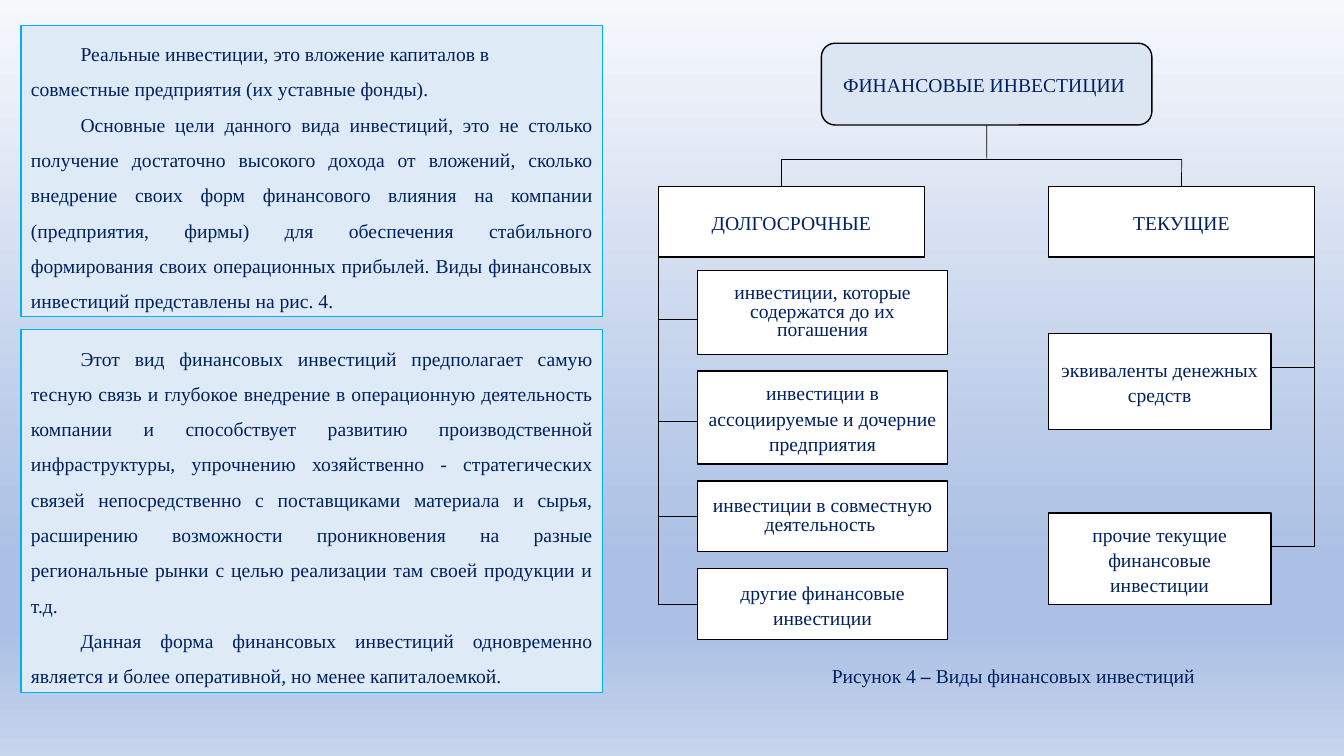
from dataclasses import dataclass

from lxml import etree
from pptx import Presentation
from pptx import util as u
from pptx.dml import color
from pptx.enum import shapes, text
from pptx.oxml import ns

NAVY, BLACK, WHITE = "002060", "000000", "FFFFFF"
PANEL_FILL, PANEL_LINE, ROOT_FILL = "DEEBF7", "00B0F0", "DCE6F2"
BACKGROUND_STOPS = ((0, "F6F8FC"), (74, "ABC0E4"), (83, "ABC0E4"), (100, "C7D5ED"))

LEFT, JUSTIFY, CENTER = text.PP_ALIGN.LEFT, text.PP_ALIGN.JUSTIFY, text.PP_ALIGN.CENTER
FONT_FORMAT = {"name": "Times New Roman", "size": u.Pt(14)}
PANEL_FRAME = {
    "word_wrap": True,
    "vertical_anchor": text.MSO_ANCHOR.TOP,
    "auto_size": text.MSO_AUTO_SIZE.SHAPE_TO_FIT_TEXT,
}
BOX_FRAME = {"word_wrap": True, "vertical_anchor": text.MSO_ANCHOR.MIDDLE}
TOP, SIDE_LEFT, BOTTOM, SIDE_RIGHT = range(4)


@dataclass
class Panel:
    top: float
    height: float
    paragraphs: tuple


@dataclass
class Box:
    label: str
    left: float
    top: float
    width: float
    height: float
    spacing: float = 1.07
    after: float = 8
    branch_y: float = 0
    joined: bool = False


PANELS = (
    Panel(0.64, 7.34, (
        (LEFT, "Реальные инвестиции, это вложение капиталов в совместные "
               "предприятия (их уставные фонды)."),
        (JUSTIFY, "Основные цели данного вида инвестиций, это не столько получение достаточно "
                  "высокого дохода от вложений, сколько внедрение своих форм финансового влияния "
                  "на компании (предприятия, фирмы) для обеспечения стабильного формирования "
                  "своих операционных прибылей. Виды финансовых инвестиций представлены "
                  "на рис. 4."),
    )),
    Panel(8.31, 9.14, (
        (JUSTIFY, "Этот вид финансовых инвестиций предполагает самую тесную связь и глубокое "
                  "внедрение в операционную деятельность компании и способствует развитию "
                  "производственной инфраструктуры, упрочнению хозяйственно - стратегических "
                  "связей непосредственно с поставщиками материала и сырья, расширению "
                  "возможности проникновения на разные региональные рынки с целью реализации "
                  "там своей продукции и т.д."),
        (JUSTIFY, "Данная форма финансовых инвестиций одновременно является и более "
                  "оперативной, но менее капиталоемкой."),
    )),
)

ROOT = Box("ФИНАНСОВЫЕ ИНВЕСТИЦИИ ", 20.7, 1.09, 8.33, 2.06)
LONG_TERM = Box("ДОЛГОСРОЧНЫЕ", 16.59, 4.7, 6.71, 1.78)
CURRENT = Box("ТЕКУЩИЕ", 26.42, 4.7, 6.71, 1.78)
LONG_TERM_ITEMS = (
    Box("инвестиции, которые содержатся до их погашения",
        17.58, 6.81, 6.3, 2.13, spacing=0.8, branch_y=8.05),
    Box("инвестиции в ассоциируемые и дочерние предприятия",
        17.58, 9.35, 6.3, 2.34, branch_y=10.62),
    Box("инвестиции в совместную деятельность ",
        17.58, 12.12, 6.3, 1.78, spacing=0.8, branch_y=13.01, joined=True),
    Box("другие финансовые инвестиции",
        17.58, 14.33, 6.3, 1.78, branch_y=15.22, joined=True),
)
CURRENT_ITEMS = (
    Box("эквиваленты денежных средств", 26.42, 8.41, 5.61, 2.41, after=0, branch_y=9.25),
    Box("прочие текущие финансовые инвестиции", 26.42, 12.93, 5.61, 2.31, branch_y=13.77),
)
CAPTION = (("Рисунок 4", False), (" – ", True), ("Виды финансовых инвестиций", False))


def rgb(value: str) -> color.RGBColor:
    return color.RGBColor.from_string(value)


def apply(target, formats: dict) -> None:
    for name, value in formats.items():
        setattr(target, name, value)


def add_run(paragraph, words: str, bold: bool = False) -> None:
    run = paragraph.add_run()
    run.text = words
    apply(run.font, {**FONT_FORMAT, "bold": bold})
    run.font.color.rgb = rgb(NAVY)


def paint_background(slide) -> None:
    fill = slide.background.fill
    fill.gradient()
    fill.gradient_angle = 270
    stops = slide.element.find(".//" + ns.qn("a:gsLst"))
    for stop in list(stops):
        stops.remove(stop)
    for percent, value in BACKGROUND_STOPS:
        stop = etree.SubElement(stops, ns.qn("a:gs"), pos=str(percent * 1000))
        etree.SubElement(stop, ns.qn("a:srgbClr"), val=value)


def add_outlined(slide, kind, place: tuple, fill: str, line: str, weight: float):
    shape = slide.shapes.add_shape(kind, *map(u.Cm, place))
    shape.shadow.inherit = False
    shape.fill.solid()
    shape.fill.fore_color.rgb = rgb(fill)
    shape.line.color.rgb = rgb(line)
    shape.line.width = u.Pt(weight)
    return shape


def add_panel(slide, panel: Panel) -> None:
    shape = add_outlined(slide, shapes.MSO_SHAPE.RECTANGLE,
                         (0.53, panel.top, 14.66, panel.height), PANEL_FILL, PANEL_LINE, 0.75)
    frame = shape.text_frame
    apply(frame, PANEL_FRAME)
    for index, (alignment, words) in enumerate(panel.paragraphs):
        paragraph = frame.add_paragraph() if index else frame.paragraphs[0]
        apply(paragraph, {"alignment": alignment, "line_spacing": 1.5})
        paragraph._p.get_or_add_pPr().set("indent", str(u.Cm(1.25)))
        add_run(paragraph, words)


def add_box(slide, box: Box, kind=shapes.MSO_SHAPE.RECTANGLE, fill: str = WHITE):
    shape = add_outlined(slide, kind, (box.left, box.top, box.width, box.height), fill, BLACK, 1)
    apply(shape.text_frame, BOX_FRAME)
    paragraph = shape.text_frame.paragraphs[0]
    apply(paragraph, {"alignment": CENTER, "line_spacing": box.spacing,
                      "space_after": u.Pt(box.after)})
    add_run(paragraph, box.label)
    return shape


def add_line(slide, start: tuple, end: tuple):
    connector = slide.shapes.add_connector(shapes.MSO_CONNECTOR.STRAIGHT,
                                           *map(u.Cm, start + end))
    connector.line.color.rgb = rgb(BLACK)
    connector.line.width = u.Pt(0.5)
    etree.SubElement(connector._element.spPr, ns.qn("a:effectLst"))
    return connector


def add_branch(slide, items: tuple, spine_x: float, side: int) -> None:
    """Draw the items, the spine below their heading and a stub to each item."""
    add_line(slide, (spine_x, 6.48), (spine_x, items[-1].branch_y))
    for item in items:
        shape = add_box(slide, item)
        edge = item.left + (item.width if side == SIDE_RIGHT else 0)
        stub = add_line(slide, (spine_x, item.branch_y), (edge, item.branch_y))
        if item.joined:
            stub.end_connect(shape, side)


def add_caption(slide) -> None:
    caption = slide.shapes.add_textbox(*map(u.Cm, (20.65, 16.56, 9.78, 0.86)))
    apply(caption.text_frame, {"word_wrap": False,
                               "auto_size": text.MSO_AUTO_SIZE.SHAPE_TO_FIT_TEXT})
    paragraph = caption.text_frame.paragraphs[0]
    apply(paragraph, {"alignment": CENTER, "line_spacing": 1.07})
    for words, bold in CAPTION:
        add_run(paragraph, words, bold)


def main() -> None:
    presentation = Presentation()
    apply(presentation, {"slide_width": u.Cm(33.87), "slide_height": u.Cm(19.05)})
    slide = presentation.slides.add_slide(presentation.slide_layouts[6])
    paint_background(slide)
    for panel in PANELS:
        add_panel(slide, panel)

    root = add_box(slide, ROOT, shapes.MSO_SHAPE.ROUNDED_RECTANGLE, ROOT_FILL)
    add_box(slide, LONG_TERM)
    current = add_box(slide, CURRENT)
    bar_y, root_x, long_term_x, current_x = 4.01, 24.87, 19.68, 29.78
    add_line(slide, (long_term_x, bar_y), (current_x, bar_y))
    add_line(slide, (root_x, 3.15), (root_x, bar_y)).begin_connect(root, BOTTOM)
    add_line(slide, (long_term_x, bar_y), (long_term_x, LONG_TERM.top))
    add_line(slide, (current_x, bar_y), (current_x, CURRENT.top)).end_connect(current, TOP)
    add_branch(slide, LONG_TERM_ITEMS, LONG_TERM.left, SIDE_LEFT)
    add_branch(slide, CURRENT_ITEMS, CURRENT.left + CURRENT.width, SIDE_RIGHT)
    add_caption(slide)
    presentation.save("out.pptx")


if __name__ == "__main__":
    main()
